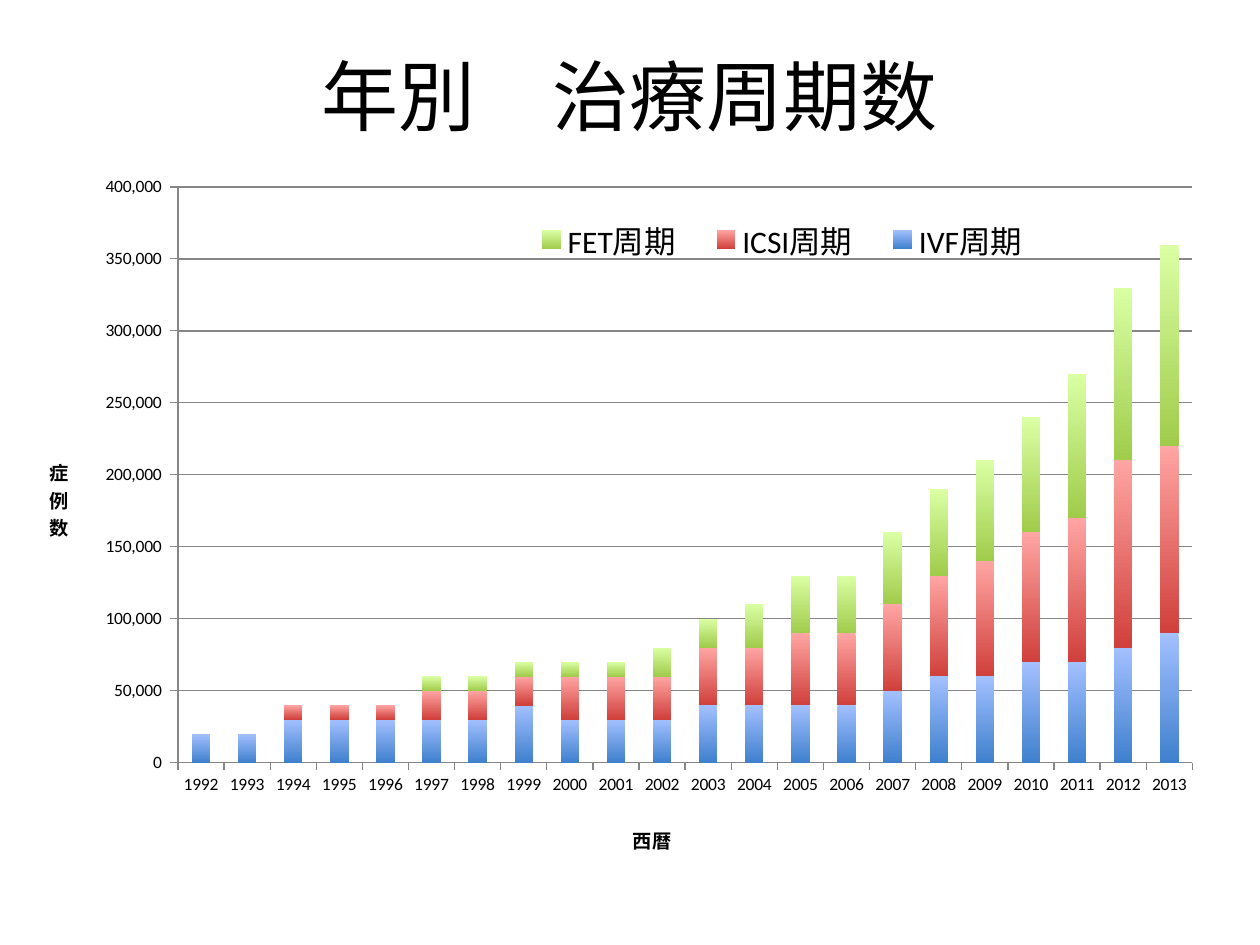
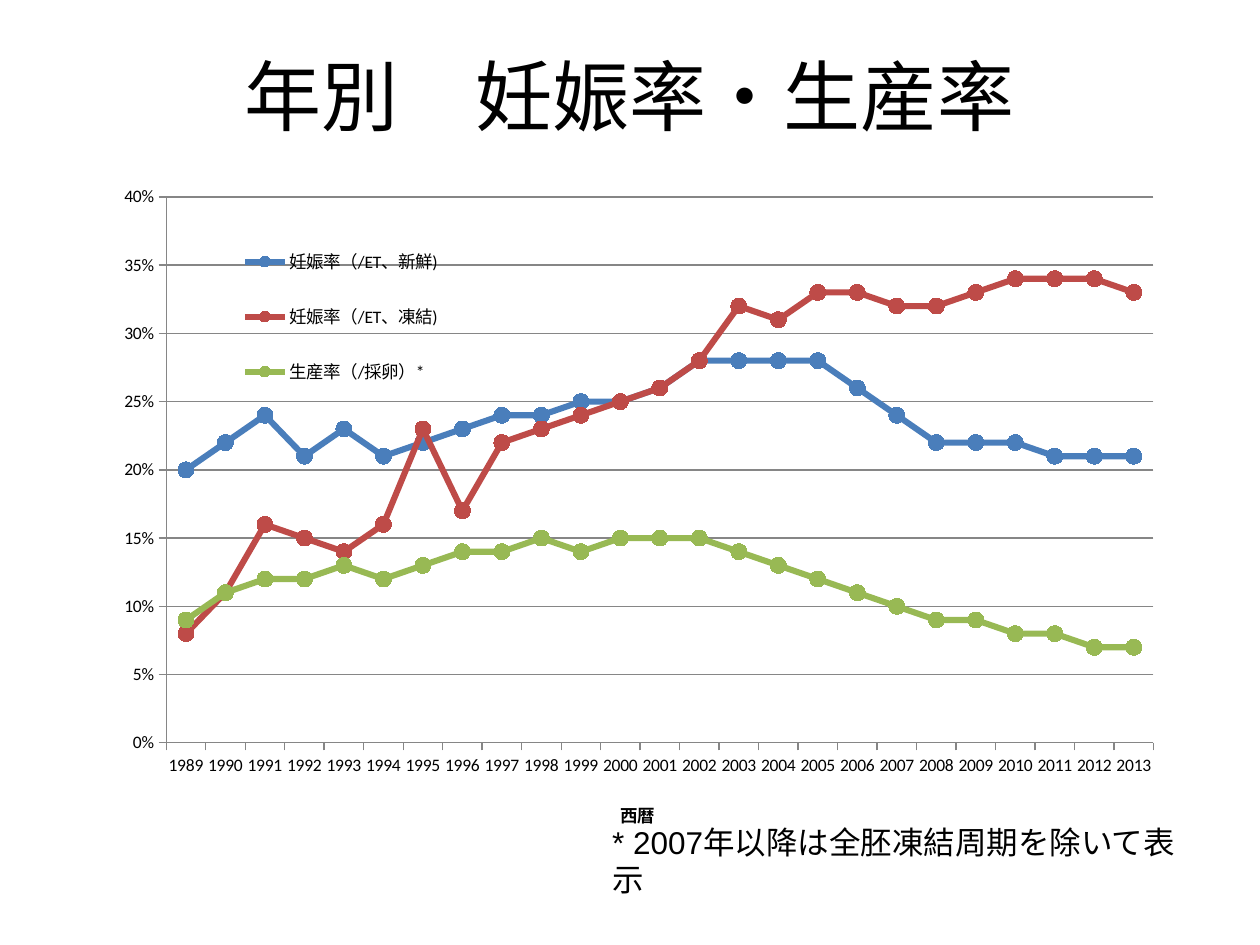
from pptx import Presentation
from pptx.chart.data import CategoryChartData
from pptx.dml.color import RGBColor
from pptx.enum.chart import XL_CHART_TYPE, XL_LEGEND_POSITION, XL_MARKER_STYLE, XL_TICK_MARK
from pptx.enum.text import MSO_ANCHOR, PP_ALIGN
from pptx.oxml import parse_xml
from pptx.oxml.ns import nsdecls, qn
from pptx.util import Inches, Pt

WIDTH, HEIGHT = Inches(10), Inches(7.5)
COLOURS = {
    "text": "000000", "axis": "868686",
    "ivf_top": "A3C0FF", "ivf_bottom": "3F80CD",
    "icsi_top": "FFA5A3", "icsi_bottom": "D0403C",
    "fet_top": "DAFFA4", "fet_bottom": "A0CC4B",
    "fresh": "4A7EBB", "frozen": "BE4B48", "birth": "98B954",
}
TITLE_BOX = (0.05, 0.04, 0.9, 0.12)
CHART_BOX = (0.033, 0.173, 0.933, 0.737)
NOTE_BOX = (0.476, 0.864, 0.49, 0.053)

CYCLES = {
    "IVF周期": ("ivf", [2, 2, 3, 3, 3, 3, 3, 4, 3, 3, 3, 4, 4, 4, 4, 5, 6, 6, 7, 7, 8, 9]),
    "ICSI周期": ("icsi", [0, 0, 1, 1, 1, 2, 2, 2, 3, 3, 3, 4, 4, 5, 5, 6, 7, 8, 9, 10, 13, 13]),
    "FET周期": ("fet", [0, 0, 0, 0, 0, 1, 1, 1, 1, 1, 2, 2, 3, 4, 4, 5, 6, 7, 8, 10, 12, 14]),
}
RATES = {
    "妊娠率（/ET、新鮮)": ("fresh", [20, 22, 24, 21, 23, 21, 22, 23, 24, 24, 25, 25, 26,
                              28, 28, 28, 28, 26, 24, 22, 22, 22, 21, 21, 21]),
    "妊娠率（/ET、凍結)": ("frozen", [8, 11, 16, 15, 14, 16, 23, 17, 22, 23, 24, 25, 26,
                               28, 32, 31, 33, 33, 32, 32, 33, 34, 34, 34, 33]),
    "生産率（/採卵）*": ("birth", [9, 11, 12, 12, 13, 12, 13, 14, 14, 15, 14, 15, 15,
                            15, 14, 13, 12, 11, 10, 9, 9, 8, 8, 7, 7]),
}


def rgb(key):
    return RGBColor.from_string(COLOURS[key])


def place(box):
    left, top, width, height = box
    return int(left * WIDTH), int(top * HEIGHT), int(width * WIDTH), int(height * HEIGHT)


def style(font, size, family="Calibri", bold=False):
    font.size, font.name, font.bold = Pt(size), family, bold
    font.color.rgb = rgb("text")


def add_text(slide, box, wording, size, family, align, anchor):
    frame = slide.shapes.add_textbox(*place(box)).text_frame
    frame.word_wrap = True
    frame.vertical_anchor = anchor
    frame.text = wording
    paragraph = frame.paragraphs[0]
    paragraph.alignment = align
    style(paragraph.runs[0].font, size, family)


def set_layout(part, index, inner=False, **shares):
    for old in part.findall(qn("c:layout")):
        part.remove(old)
    target = '<c:layoutTarget val="inner"/>' if inner else ""
    modes = "".join(f'<c:{axis}Mode val="edge"/>' for axis in "xy")
    values = "".join(f'<c:{key} val="{share}"/>' for key, share in shares.items())
    part.insert(index, parse_xml(
        f'<c:layout {nsdecls("c")}><c:manualLayout>{target}{modes}{values}'
        "</c:manualLayout></c:layout>"))


def add_axis_title(axis, wording, size, x, y):
    title = axis.axis_title
    title.text_frame.text = wording
    style(title.text_frame.paragraphs[0].runs[0].font, size, bold=True)
    set_layout(title._element, 1, x=x, y=y)
    return title


def style_axis(axis):
    axis.major_tick_mark = XL_TICK_MARK.OUTSIDE
    axis.minor_tick_mark = XL_TICK_MARK.NONE
    axis.format.line.color.rgb = rgb("axis")
    style(axis.tick_labels.font, 10)


def add_yearly_chart(slide, box, kind, first_year, table, scale, top, step,
                     number_format, plot, legend, legend_size):
    count = len(next(iter(table.values()))[1])
    data = CategoryChartData()
    data.categories = [str(first_year + offset) for offset in range(count)]
    for name, (_, values) in table.items():
        data.add_series(name, [round(value * scale, 2) for value in values])
    chart = slide.shapes.add_chart(kind, *place(box), data).chart
    style(chart.font, 10)
    chart.has_title = False
    chart.plots[0].vary_by_categories = False

    years, amounts = chart.category_axis, chart.value_axis
    for axis in (years, amounts):
        style_axis(axis)
    amounts.minimum_scale, amounts.maximum_scale, amounts.major_unit = 0, top, step
    amounts.has_major_gridlines = True
    amounts.major_gridlines.format.line.color.rgb = rgb("axis")
    amounts.tick_labels.number_format = number_format
    amounts.tick_labels.number_format_is_linked = False

    chart.has_legend = True
    chart.legend.position = XL_LEGEND_POSITION.RIGHT
    chart.legend.include_in_layout = False
    style(chart.legend.font, legend_size)
    set_layout(chart.legend._element, 1, **legend)
    set_layout(chart._chartSpace.chart.plotArea, 0, inner=True, **plot)
    return chart


def add_cycle_chart(slide, box):
    chart = add_yearly_chart(
        slide, box, XL_CHART_TYPE.COLUMN_STACKED, 1992, CYCLES, 10000, 400000, 50000,
        r"#,##0_);[Red]\(#,##0\)", dict(x=0.116, y=0.034, w=0.863, h=0.832),
        dict(x=0.4, y=0.07, w=0.46, h=0.08), 18)
    chart.plots[0].overlap = 100
    chart.plots[0].gap_width = 150
    for series, (treatment, _) in zip(chart.series, CYCLES.values()):
        fill = series.format.fill
        fill.gradient()
        fill.gradient_angle = 270
        for stop, end in zip(fill.gradient_stops, ("top", "bottom")):
            stop.color.rgb = rgb(f"{treatment}_{end}")
    add_axis_title(chart.category_axis, "西暦", 11, 0.5, 0.95)
    cases = add_axis_title(chart.value_axis, "症例数", 11, 0.004, 0.418)
    body = cases._element.find(".//" + qn("a:bodyPr"))
    body.set("rot", "0")
    body.set("vert", "wordArtVertRtl")


def add_rate_chart(slide, box):
    chart = add_yearly_chart(
        slide, box, XL_CHART_TYPE.LINE_MARKERS, 1989, RATES, 0.01, 0.4, 0.05,
        "0%", dict(x=0.106, y=0.048, w=0.84, h=0.784),
        dict(x=0.155, y=0.08, w=0.2, h=0.28), 10)
    for series, (rate, _) in zip(chart.series, RATES.values()):
        series.smooth = False
        series.format.line.width = Pt(3.5)
        series.format.line.color.rgb = rgb(rate)
        marker = series.marker
        marker.style, marker.size = XL_MARKER_STYLE.CIRCLE, 9
        marker.format.fill.solid()
        marker.format.fill.fore_color.rgb = rgb(rate)
        marker.format.line.color.rgb = rgb(rate)
    add_axis_title(chart.category_axis, "西暦", 10, 0.49, 0.91)


def add_titled_slide(deck, title):
    slide = deck.slides.add_slide(deck.slide_layouts[6])
    add_text(slide, TITLE_BOX, title, 44, "Calibri", PP_ALIGN.CENTER, MSO_ANCHOR.MIDDLE)
    return slide


def main():
    deck = Presentation()
    deck.slide_width, deck.slide_height = WIDTH, HEIGHT
    add_cycle_chart(add_titled_slide(deck, "年別　治療周期数"), CHART_BOX)
    rates = add_titled_slide(deck, "年別　妊娠率・生産率")
    add_rate_chart(rates, CHART_BOX)
    add_text(rates, NOTE_BOX, "* 2007年以降は全胚凍結周期を除いて表示", 18, "Arial",
             PP_ALIGN.LEFT, MSO_ANCHOR.TOP)
    deck.save("out.pptx")


if __name__ == "__main__":
    main()
